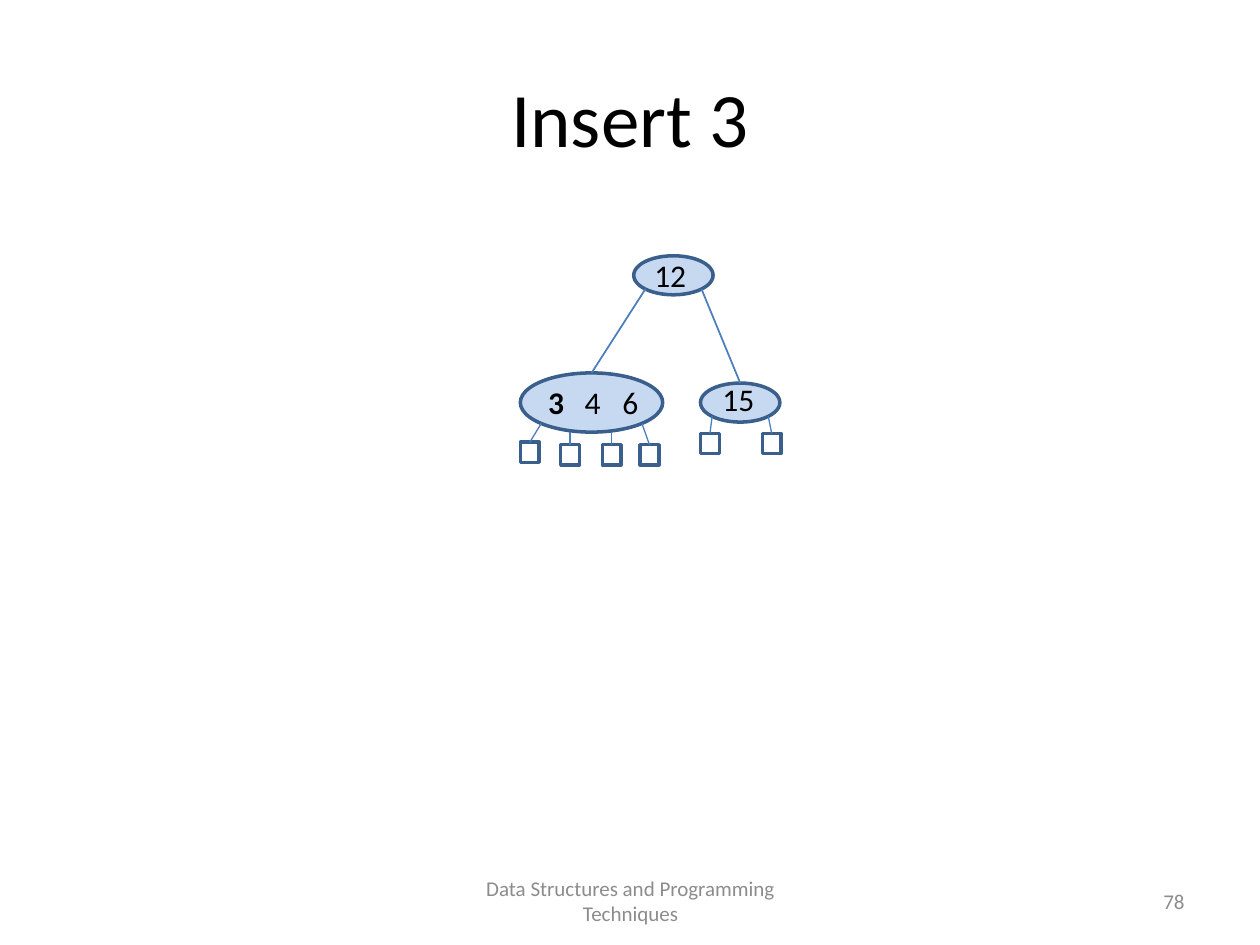
"""Builds a slide showing a 2-4 tree after inserting the key 3."""
import math

from lxml import etree
from pptx import Presentation
from pptx import util as u
from pptx.dml.color import RGBColor
from pptx.enum import shapes, text
from pptx.oxml import ns

COLORS = {"ink": "000000", "muted": "8C8C8C", "node": "C6D9F1",
          "outline": "3A5F8C", "edge": "4B7EBC"}
FONT = "Calibri"
LEAF_SIZE = (0.15, 0.16)

CAPTIONS = [
    ("Insert 3", (0.5, 0.3, 9, 1.25), 44, "ink", text.PP_ALIGN.CENTER),
    ("Data Structures and Programming Techniques", (3.42, 6.95, 3.17, 0.4),
     12, "muted", text.PP_ALIGN.CENTER),
    ("78", (7.17, 6.95, 2.33, 0.4), 12, "muted", text.PP_ALIGN.RIGHT),
]
ROOT = {"oval": (5.03, 2.03, 0.63, 0.31), "label": (5.05, 1.98, 0.54, 0.4),
        "keys": ["12"], "leaves": []}
CHILDREN = [
    {"oval": (4.13, 2.96, 1.13, 0.47), "label": (4.21, 2.99, 0.98, 0.4),
     "keys": ["3", "4", "6"], "new": "3", "tabs": (0.29, 0.59),
     "leaves": [(4.13, 3.51), (4.45, 3.53), (4.78, 3.53), (5.08, 3.53)]},
    {"oval": (5.56, 3.04, 0.63, 0.31), "label": (5.59, 2.97, 0.54, 0.4),
     "keys": ["15"], "leaves": [(5.56, 3.44), (6.05, 3.44)]},
]


def color(name):
    return RGBColor.from_string(COLORS[name])


def inches(values):
    return [u.Inches(value) for value in values]


def add_text(page, parts, place, size, ink, align, anchor):
    box = page.shapes.add_textbox(*inches(place))
    frame = box.text_frame
    frame.word_wrap = True
    frame.vertical_anchor = anchor
    para = frame.paragraphs[0]
    para.alignment = align
    para.font.name, para.font.size = FONT, u.Pt(size)
    para.font.color.rgb = color(ink)
    for words, bold in parts:
        span = para.add_run()
        span.text = words
        if bold:
            span.font.bold = True
    return frame


def add_outlined(page, kind, place, fill=None):
    shape = page.shapes.add_shape(kind, *inches(place))
    shape.shadow.inherit = False
    if fill:
        shape.fill.solid()
        shape.fill.fore_color.rgb = color(fill)
    else:
        shape.fill.background()
    shape.line.color.rgb = color("outline")
    shape.line.width = u.Pt(2)
    return shape


def add_edge(page, start, target, width):
    top = (target.left + target.width // 2, target.top)
    edge = page.shapes.add_connector(
        shapes.MSO_CONNECTOR.STRAIGHT, *inches(start), *top)
    edge.end_connect(target, 0)
    edge.line.color.rgb = color("edge")
    edge.line.width = u.Pt(width)
    etree.SubElement(edge._element.spPr, ns.qn("a:effectLst"))


def oval_corner(place, side):
    left, top, width, height = place
    reach = math.sqrt(0.5) / 2
    return left + width * (0.5 + side * reach), top + height * (0.5 + reach)


def set_tabs(frame, stops):
    frame.margin_left = u.Inches(0.14)
    para = frame.paragraphs[0]
    para.alignment = text.PP_ALIGN.LEFT
    tabs = etree.Element(ns.qn("a:tabLst"))
    for stop in stops:
        etree.SubElement(tabs, ns.qn("a:tab"), pos=str(u.Inches(stop)), algn="l")
    properties = para._p.get_or_add_pPr()
    properties.insert_element_before(tabs, "a:defRPr", "a:extLst")


def add_node(page, node):
    oval = add_outlined(page, shapes.MSO_SHAPE.OVAL, node["oval"], "node")
    parts = []
    for index, key in enumerate(node["keys"]):
        parts.append(("\t" * (index > 0) + key, key == node.get("new")))
    frame = add_text(page, parts, node["label"], 18, "ink",
                     text.PP_ALIGN.CENTER, text.MSO_ANCHOR.TOP)
    if "tabs" in node:
        set_tabs(frame, node["tabs"])
    last = len(node["leaves"]) - 1
    for index, place in enumerate(node["leaves"]):
        leaf = add_outlined(page, shapes.MSO_SHAPE.RECTANGLE, place + LEAF_SIZE)
        if index in (0, last):
            start = oval_corner(node["oval"], 1 if index else -1)
        else:
            start = (place[0] + LEAF_SIZE[0] / 2, node["oval"][1] + node["oval"][3])
        add_edge(page, start, leaf, 0.75)
    return oval


def main():
    deck = Presentation()
    deck.slide_width, deck.slide_height = inches((10, 7.5))
    page = deck.slides.add_slide(deck.slide_layouts[6])
    for words, place, size, ink, align in CAPTIONS:
        add_text(page, [(words, False)], place, size, ink, align,
                 text.MSO_ANCHOR.MIDDLE)
    add_node(page, ROOT)
    for side, child in zip((-1, 1), CHILDREN):
        oval = add_node(page, child)
        add_edge(page, oval_corner(ROOT["oval"], side), oval, 1)
    deck.save("out.pptx")


if __name__ == "__main__":
    main()
